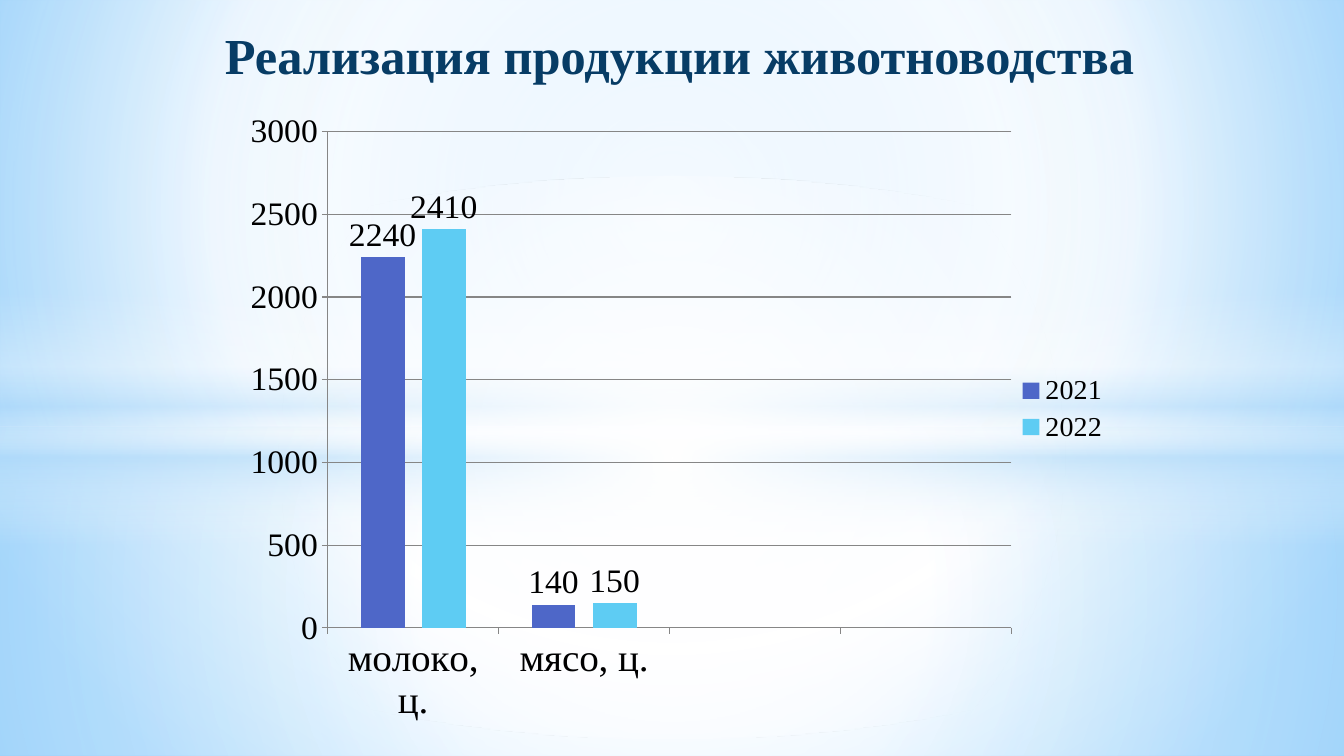
from pptx import Presentation
from pptx import util as u
from pptx.chart import data as cd
from pptx.dml import color as col
from pptx.enum import chart as ch, shapes as sh, text as tx
from pptx.oxml import parse_xml
from pptx.oxml.ns import nsdecls, qn

COLORS = {
    "white": "FFFFFF", "pale": "B4DCFA", "sky": "9ED5FF", "deep": "5BB9FF",
    "navy": "073C65", "black": "000000", "gray": "868686",
    "2021": "4E67C8", "2022": "5ECCF3",
}
FACE = "Times New Roman"
WIDE = 33.87
ROUND = (50, 50, 50, 50)
LAYERS = [
    (sh.MSO_SHAPE.RECTANGLE, (0, 10.75, WIDE, 8.3), ROUND,
     [(0, "white", 92), (37, "white", 77), (100, "pale", 80)]),
    (sh.MSO_SHAPE.RECTANGLE, (0, 0, WIDE, 10.75), ROUND,
     [(0, "white", 90), (48, "white", 63), (100, "pale", 80)]),
    (sh.MSO_SHAPE.RECTANGLE, (0, 7.37, WIDE, 6.35), None,
     [(0, "white", 0), (29, "white", 30), (45, "pale", 40),
      (55, "white", 26), (65, "pale", 60), (100, "white", 0)]),
    (sh.MSO_SHAPE.OVAL, (0, 4.45, WIDE, 14.17), ROUND,
     [(0, "white", 100), (54, "white", 0)]),
]


def rgb(name):
    return col.RGBColor.from_string(COLORS[name])


def put(thing, form):
    for key, value in form.items():
        setattr(thing, key, value)


def style(font, size, tint="black", bold=False):
    put(font, {"name": FACE, "size": u.Pt(size), "bold": bold})
    font.color.rgb = rgb(tint)


def blend(fill, root, stops, focus):
    fill.solid()
    marks = "".join(
        f'<a:gs pos="{pos * 1000}"><a:srgbClr val="{COLORS[tint]}">'
        f'<a:alpha val="{alpha * 1000}"/></a:srgbClr></a:gs>'
        for pos, tint, alpha in stops)
    if focus:
        sides = " ".join(f'{s}="{v * 1000}"' for s, v in zip("ltrb", focus))
        way = f'<a:path path="circle"><a:fillToRect {sides}/></a:path>'
    else:
        way = '<a:lin ang="5400000" scaled="0"/>'
    plain = root.find(".//" + qn("a:solidFill"))
    plain.getparent().replace(plain, parse_xml(
        f'<a:gradFill {nsdecls("a")} rotWithShape="1">'
        f'<a:gsLst>{marks}</a:gsLst>{way}</a:gradFill>'))


def layer(slide, kind, box, focus, stops):
    shape = slide.shapes.add_shape(kind, *map(u.Cm, box))
    shape.shadow.inherit = False
    shape.line.fill.background()
    blend(shape.fill, shape.element, stops, focus)


def title(slide, words):
    head = slide.shapes.title
    put(head, dict(zip(("left", "top", "width", "height"),
                       map(u.Cm, (2.29, 0.48, 29.67, 1.8)))))
    frame = head.text_frame
    put(frame, {"text": words, "word_wrap": True,
                "vertical_anchor": tx.MSO_ANCHOR.MIDDLE})
    line = frame.paragraphs[0]
    line.alignment = tx.PP_ALIGN.CENTER
    style(line.runs[0].font, 36, "navy", True)
    head.element.getparent().append(head.element)


def place(graph, box):
    area = graph.element.find(".//" + qn("c:plotArea"))
    for old in area.findall(qn("c:layout")):
        area.remove(old)
    sizes = "".join(f'<c:{k} val="{v}"/>' for k, v in zip("xywh", box))
    area.insert(0, parse_xml(
        f'<c:layout {nsdecls("c")}><c:manualLayout>'
        '<c:layoutTarget val="inner"/><c:xMode val="edge"/>'
        f'<c:yMode val="edge"/>{sizes}</c:manualLayout></c:layout>'))


def trace(line):
    line.color.rgb = rgb("gray")
    line.width = u.Pt(0.75)


def bars(slide):
    data = cd.CategoryChartData()
    data.categories = ["молоко, ц.", "мясо, ц.", "", ""]
    data.add_series("2021", (2240, 140, None, None))
    data.add_series("2022", (2410, 150, None, None))
    graph = slide.shapes.add_chart(
        ch.XL_CHART_TYPE.COLUMN_CLUSTERED,
        *map(u.Cm, (5.64, 2.84, 22.58, 15.34)), data).chart
    style(graph.font, 18)
    put(graph, {"has_title": False, "has_legend": True})
    put(graph.legend, {"position": ch.XL_LEGEND_POSITION.RIGHT,
                       "include_in_layout": False})
    style(graph.legend.font, 20)
    plot = graph.plots[0]
    put(plot, {"overlap": -39, "gap_width": 150, "vary_by_categories": False})
    for row in plot.series:
        row.format.fill.solid()
        row.format.fill.fore_color.rgb = rgb(row.name)
        tags = row.data_labels
        put(tags, {"show_value": True,
                   "position": ch.XL_LABEL_POSITION.OUTSIDE_END})
        style(tags.font, 24)
    for axis, size in ((graph.category_axis, 28), (graph.value_axis, 24)):
        axis.major_tick_mark = ch.XL_TICK_MARK.OUTSIDE
        style(axis.tick_labels.font, size)
        trace(axis.format.line)
    put(graph.value_axis, {"minimum_scale": 0, "maximum_scale": 3000,
                           "major_unit": 500, "has_major_gridlines": True})
    trace(graph.value_axis.major_gridlines.format.line)
    place(graph, (0.116, 0.032, 0.763, 0.838))


def main():
    deck = Presentation()
    put(deck, {"slide_width": u.Cm(WIDE), "slide_height": u.Cm(19.05)})
    slide = deck.slides.add_slide(deck.slide_layouts[5])
    blend(slide.background.fill, slide.element,
          [(0, "sky", 100), (60, "white", 100), (100, "deep", 100)],
          (20, 10, 20, 60))
    for item in LAYERS:
        layer(slide, *item)
    bars(slide)
    title(slide, "Реализация продукции животноводства")
    deck.save("out.pptx")


if __name__ == "__main__":
    main()
